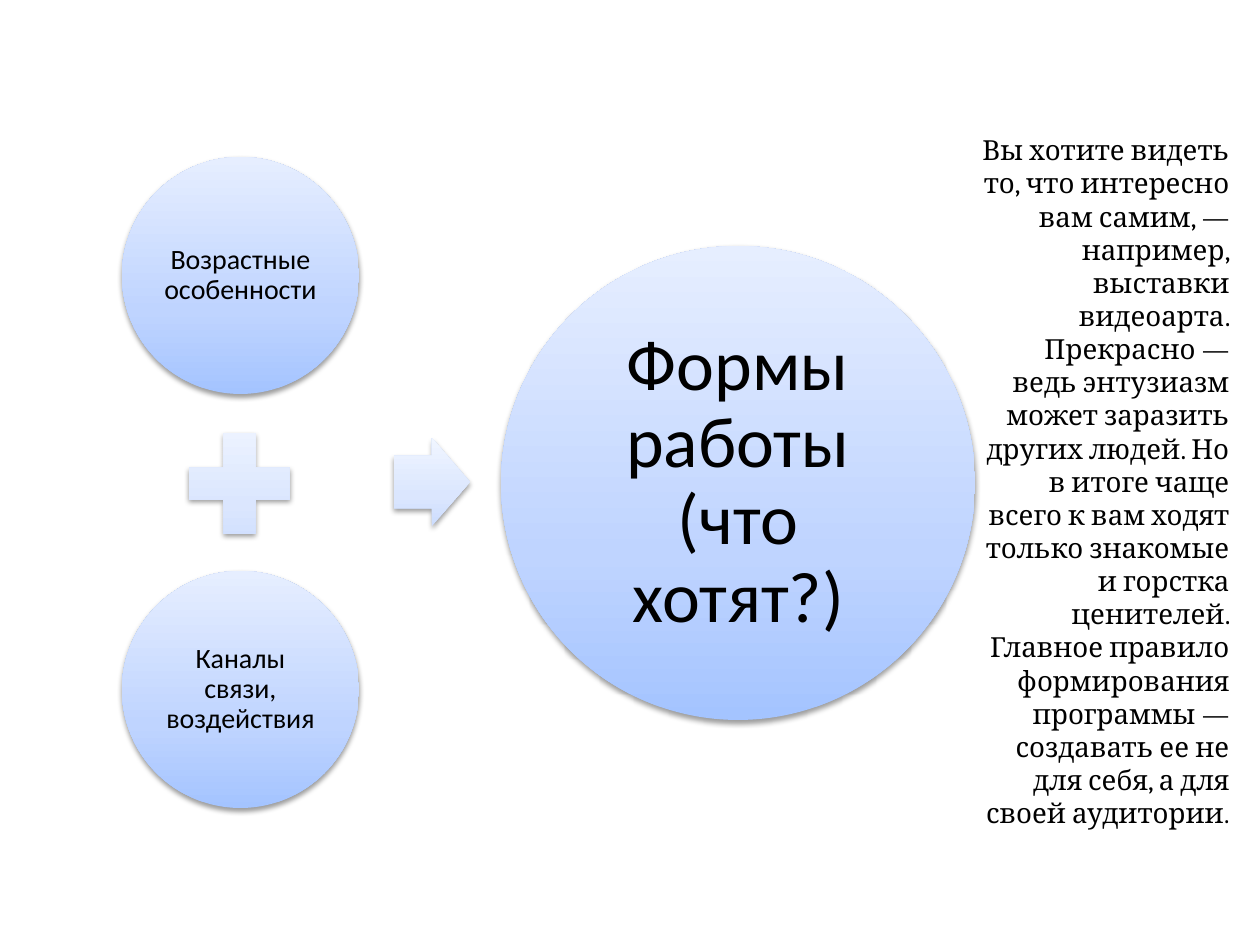
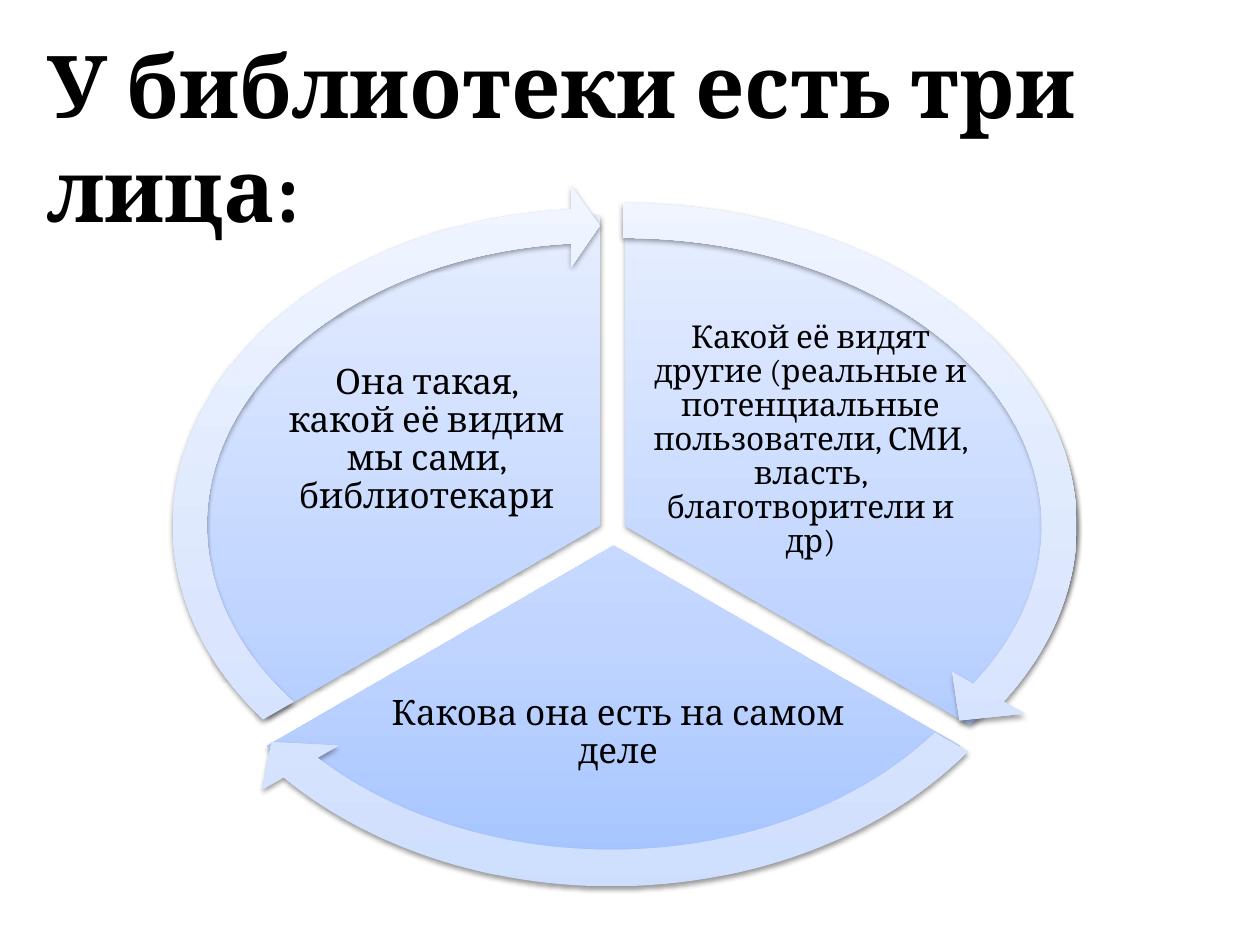
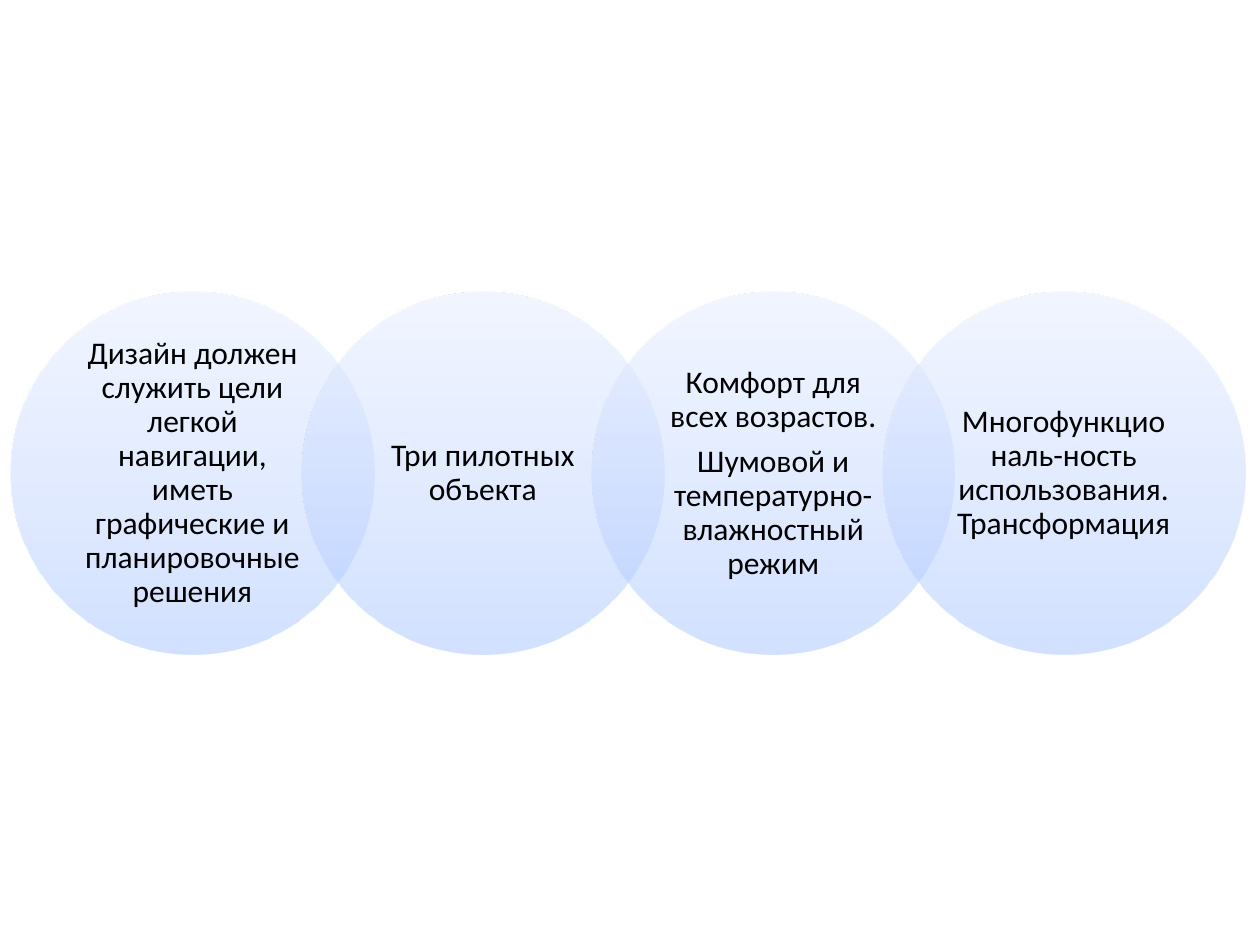
import dataclasses
import math

import pptx
import pptx.dml.color
import pptx.enum.shapes
import pptx.enum.text
import pptx.oxml
import pptx.oxml.ns
import pptx.util


@dataclasses.dataclass(frozen=True)
class Theme:
    ink: str = "000000"
    strong: tuple = ((0, "A4C4FF"), (35, "BFD4FF"), (100, "E6EEFF"))
    pale: tuple = ((0, "CDDDFE"), (35, "DBE6FE"), (100, "F0F5FF"))
    sans: str = "Calibri"
    serif: str = "Cambria"
    title: float = 49.5
    hero: float = 41
    large: float = 20
    medium: float = 18
    small: float = 16
    note: float = 15.8
    note_end: float = 15


THEME = Theme()
SCALE = 914400 / 126
SHAPE = pptx.enum.shapes.MSO_SHAPE
ALIGN = pptx.enum.text.PP_ALIGN
INSCRIBED = (1 - math.sqrt(0.5)) / 2


def draw(page, kind, frame, stops, adjust=(), alpha=100, shadow=True):
    shape = page.shapes.add_shape(kind, *[round(value * SCALE) for value in frame])
    for index, value in enumerate(adjust):
        shape.adjustments[index] = value
    shape.line.fill.background()
    shape.shadow.inherit = False
    names = pptx.oxml.ns.nsdecls("a")
    colours = "".join(
        f'<a:gs pos="{place * 1000}"><a:srgbClr val="{colour}">'
        f'<a:alpha val="{alpha * 1000}"/></a:srgbClr></a:gs>'
        for place, colour in stops
    )
    gradient = pptx.oxml.parse_xml(
        f'<a:gradFill {names} rotWithShape="1"><a:gsLst>{colours}</a:gsLst>'
        '<a:lin ang="16200000" scaled="0"/></a:gradFill>'
    )
    properties = shape.element.spPr
    properties.find(pptx.oxml.ns.qn("a:ln")).addprevious(gradient)
    if shadow:
        properties.find(pptx.oxml.ns.qn("a:effectLst")).append(pptx.oxml.parse_xml(
            f'<a:outerShdw {names} blurRad="39400" dist="20300" dir="5400000" rotWithShape="0">'
            f'<a:srgbClr val="{THEME.ink}"><a:alpha val="38000"/></a:srgbClr></a:outerShdw>'
        ))


def write(page, text, frame, size, font=THEME.sans, bold=False, align=ALIGN.CENTER,
          insets=None, end="", end_size=None):
    box = page.shapes.add_textbox(*[round(value * SCALE) for value in frame])
    body = box.text_frame
    body.word_wrap = True
    if insets:
        side, edge = [round(value * SCALE) for value in insets]
        body.margin_left = body.margin_right = side
        body.margin_top = body.margin_bottom = edge
        body.vertical_anchor = pptx.enum.text.MSO_ANCHOR.MIDDLE
    else:
        body.auto_size = pptx.enum.text.MSO_AUTO_SIZE.SHAPE_TO_FIT_TEXT
    for index, line in enumerate(text.split("\n")):
        para = body.add_paragraph() if index else body.paragraphs[0]
        para.alignment = align
        if insets:
            para.line_spacing = 0.9
            para.space_after = pptx.util.Pt(size * 0.35)
        for words, points in ((line, size), (end, end_size)):
            if words:
                span = para.add_run()
                span.text = words
                span.font.name = font
                span.font.size = pptx.util.Pt(points)
                span.font.bold = bold
                span.font.color.rgb = pptx.dml.color.RGBColor.from_string(THEME.ink)


deck = pptx.Presentation()
deck.slide_width = round(1260 * SCALE)
deck.slide_height = round(945 * SCALE)
blank = deck.slide_layouts[6]

page = deck.slides.add_slide(blank)
draw(page, SHAPE.MATH_PLUS, (171, 415, 137, 137), THEME.pale)
draw(page, SHAPE.RIGHT_ARROW, (394, 438, 76, 88), THEME.pale, adjust=(0.6, 0.5))
for text, left, top, diameter, size, inset in (
    ("Возрастные особенности", 122, 157, 237, THEME.small, 3),
    ("Каналы связи, воздействия", 122, 571, 237, THEME.small, 3),
    ("Формы работы (что хотят?)", 501, 246, 474, THEME.hero, 8),
):
    gap = diameter * INSCRIBED
    inner = diameter - 2 * gap
    draw(page, SHAPE.OVAL, (left, top, diameter, diameter), THEME.strong)
    write(page, text, (left + gap, top + gap, inner, inner), size, insets=(inset, inset))
write(
    page,
    "Вы хотите видеть то, что интересно вам самим, — например, выставки видеоарта. "
    "Прекрасно — ведь энтузиазм может заразить других людей. Но в итоге чаще всего "
    "к вам ходят только знакомые и горстка ценителей. Главное правило формирования "
    "программы — создавать ее не для себя, а для своей аудитории",
    (969, 127, 273, 714), THEME.note, font=THEME.serif, align=ALIGN.RIGHT,
    end=".", end_size=THEME.note_end,
)

page = deck.slides.add_slide(blank)
write(page, "У библиотеки есть три лица:", (35, 26, 1217, 328), THEME.title,
      font=THEME.serif, bold=True, align=ALIGN.LEFT)
for text, sector, angles, label, size in (
    ("Какой её видят другие (реальные и потенциальные пользователи, СМИ, власть, "
     "благотворители и др)",
     (174, 219, 903, 614), (162, 18), (649, 349, 323, 183), THEME.medium),
    ("Какова она есть на самом деле",
     (180, 214, 867, 664), (18, 90), (386, 646, 464, 174), THEME.large),
    ("Она такая, какой её видим мы сами, библиотекари",
     (178, 215, 845, 620), (90, 162), (276, 348, 301, 184), THEME.large),
):
    draw(page, SHAPE.PIE, sector, THEME.strong, adjust=angles)
    write(page, text, label, size, font=THEME.serif, insets=(4, 4))
for ring, finish, start in (
    ((145, 179, 956, 694), 14.73, 161.99),
    ((139, 180, 945, 732), 86.72, 18),
    ((149, 185, 901, 680), 158.73, 90),
):
    draw(page, SHAPE.CIRCULAR_ARROW, ring, THEME.pale,
         adjust=(0.05, 3.28, finish, start, 0.06))

page = deck.slides.add_slide(blank)
diameter = 363
gap = diameter * INSCRIBED
inner = diameter - 2 * gap
for index, text in enumerate((
    "Дизайн должен служить цели легкой навигации, иметь графические и планировочные решения",
    "Три пилотных объекта",
    "Комфорт для всех возрастов.\nШумовой и температурно-влажностный режим",
    "Многофункциональ-ность использования. Трансформация",
)):
    left = 11 + index * diameter * 0.8
    draw(page, SHAPE.OVAL, (left, 292, diameter, diameter), THEME.strong, alpha=50, shadow=False)
    write(page, text, (left + gap, 292 + gap, inner, inner), THEME.medium, insets=(20, 4))

deck.save("out.pptx")
